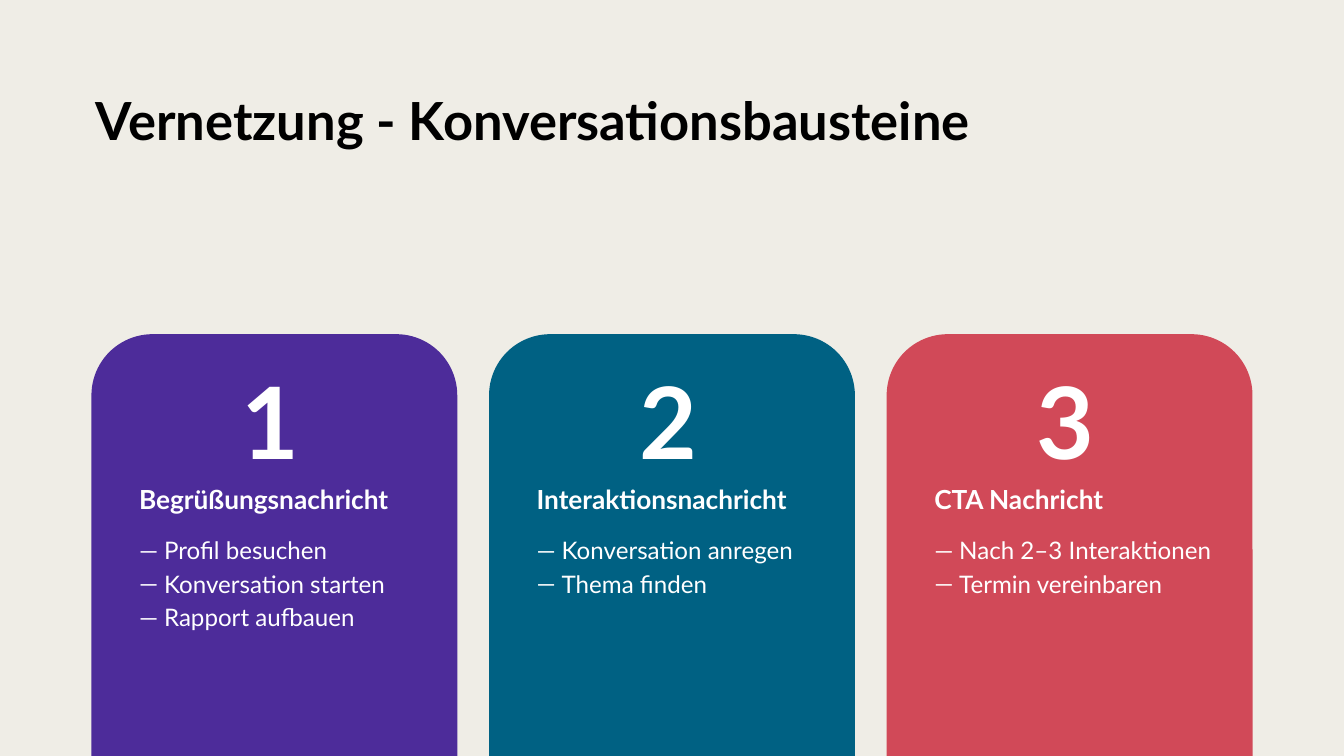
from dataclasses import dataclass

from lxml import etree
from pptx import Presentation
from pptx import util as u
from pptx.dml.color import RGBColor
from pptx.enum import shapes, text
from pptx.oxml import ns


@dataclass(frozen=True)
class Theme:
    font: str = "Lato"
    back: str = "EFEDE6"
    dark: str = "000000"
    light: str = "FFFFFF"
    title: int = 50
    number: int = 95
    head: int = 25
    body: int = 23


THEME = Theme()
LEFT, TOP, WIDTH, HEIGHT, STEP = 1.21, 4.42, 4.84, 5.58, 5.26
INSET = 0.63
CARDS = [
    ("4D2C9A", "Begrüßungsnachricht", 3.94,
     ["Profil besuchen", "Konversation starten", "Rapport aufbauen"]),
    ("006183", "Interaktionsnachricht", 3.94,
     ["Konversation anregen", "Thema finden"]),
    ("D14958", "CTA Nachricht", 4.41,
     ["Nach 2–3 Interaktionen", "Termin vereinbaren"]),
]


def assign(item, values):
    for name, value in values.items():
        setattr(item, name, value)


def place(shape, *box):
    names = ("left", "top", "width", "height")
    assign(shape, dict(zip(names, map(u.Inches, box))))


def paint(fill, color):
    fill.solid()
    fill.fore_color.rgb = RGBColor.from_string(color)


def dash(para):
    """Give the paragraph a hanging em dash as its bullet."""
    props = para._p.get_or_add_pPr()
    props.set("marL", str(u.Inches(0.33)))
    props.set("indent", str(u.Inches(-0.38)))
    color = etree.SubElement(props, ns.qn("a:buClr"))
    etree.SubElement(color, ns.qn("a:srgbClr"), val=THEME.light)
    etree.SubElement(props, ns.qn("a:buFont"), typeface=THEME.font)
    etree.SubElement(props, ns.qn("a:buChar"), char="—")


def write(shape, lines, size, color=THEME.light, bold=True, space=1.15,
          align=text.PP_ALIGN.LEFT, anchor=text.MSO_ANCHOR.TOP,
          margins=(0, 0, 0, 0), bullets=False):
    frame = shape.text_frame
    sides = ("margin_left", "margin_top", "margin_right", "margin_bottom")
    assign(frame, dict(zip(sides, map(u.Inches, margins))))
    assign(frame, {"word_wrap": True, "vertical_anchor": anchor,
                   "auto_size": text.MSO_AUTO_SIZE.NONE})
    frame.text = "\n".join(lines)
    for para in frame.paragraphs:
        assign(para, {"alignment": align, "line_spacing": space,
                      "space_before": u.Pt(0)})
        if bullets:
            dash(para)
        for run in para.runs:
            assign(run.font, {"name": THEME.font, "size": u.Pt(size),
                              "bold": bold})
            run.font.color.rgb = RGBColor.from_string(color)


def add_card(slide, left, color, number):
    card = slide.shapes.add_shape(
        shapes.MSO_SHAPE.ROUND_2_SAME_RECTANGLE,
        *map(u.Inches, (left, TOP, WIDTH, HEIGHT)))
    card.adjustments[0] = 0.167
    card.shadow.inherit = False
    paint(card.fill, color)
    card.line.fill.background()
    write(card, [str(number)], THEME.number, space=1,
          align=text.PP_ALIGN.CENTER, margins=(0, 0.1, 0.1, 0.1))


def add_head(slide, left, words):
    head = slide.shapes.add_textbox(
        *map(u.Inches, (left, 6.33, 3.94, 0.68)))
    write(head, [words], THEME.head)


def set_list(slide, body, left, width, lines):
    """Fill a body placeholder and bring it in front of its card."""
    place(body, left, 7.03, width, 1.58)
    write(body, lines, THEME.body, bold=False, bullets=True)
    slide.shapes.element.append(body.element)


def main():
    deck = Presentation()
    assign(deck, {"slide_width": u.Inches(17.78),
                  "slide_height": u.Inches(10)})
    layout = deck.slide_layouts.get_by_name("Comparison")
    slide = deck.slides.add_slide(layout)
    paint(slide.background.fill, THEME.back)

    title, *bodies = slide.placeholders
    place(title, LEFT, 0.65, 13.72, 1.74)
    write(title, ["Vernetzung - Konversationsbausteine"], THEME.title,
          THEME.dark, anchor=text.MSO_ANCHOR.MIDDLE, margins=(0.06,) * 4)

    for i, (color, head, width, lines) in enumerate(CARDS):
        left = LEFT + i * STEP
        add_card(slide, left, color, i + 1)
        add_head(slide, left + INSET, head)
        set_list(slide, bodies[i], left + INSET, width, lines)
    for spare in bodies[len(CARDS):]:
        slide.shapes.element.remove(spare.element)

    deck.save("out.pptx")


if __name__ == "__main__":
    main()
